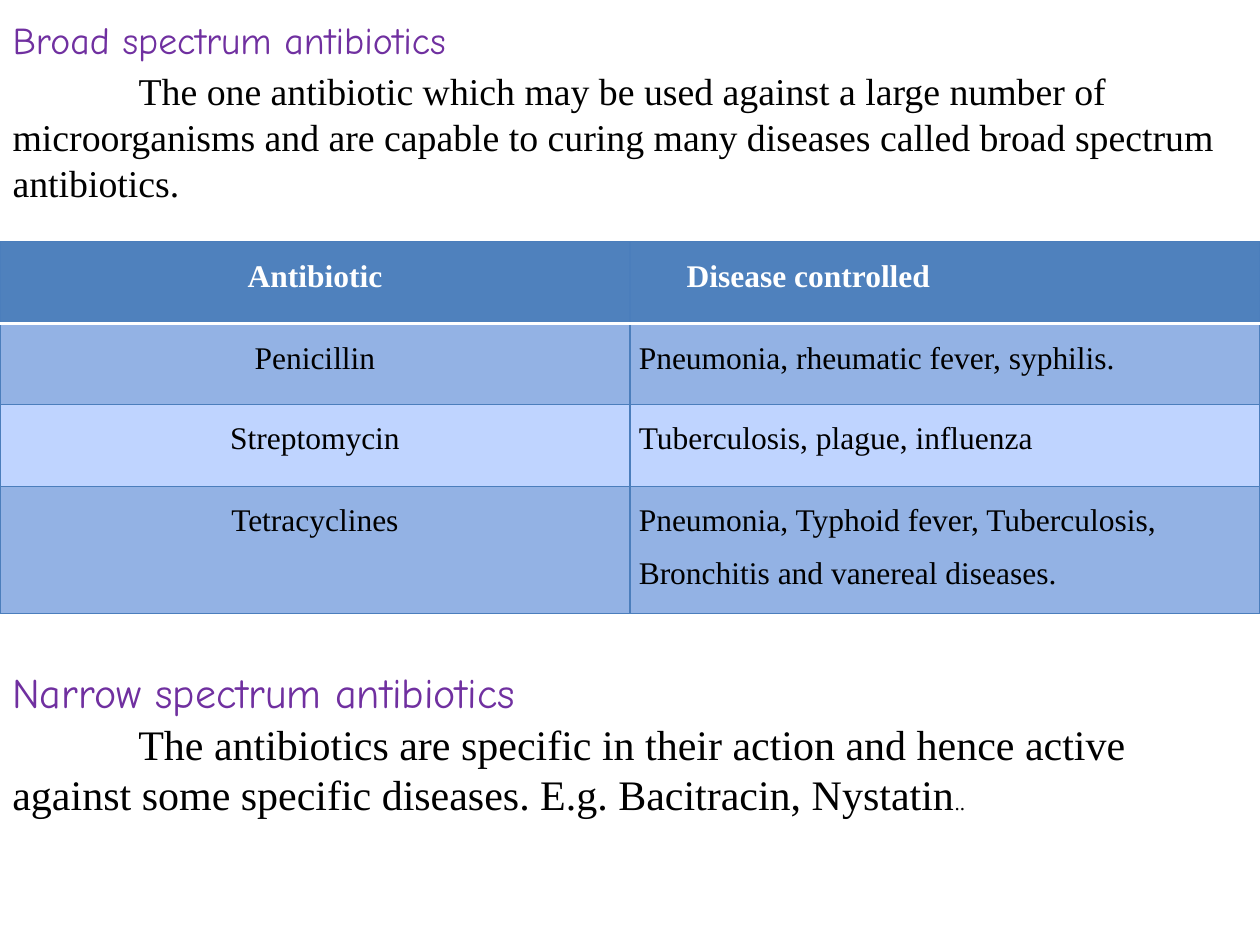
from pptx import Presentation
from pptx.dml.color import RGBColor
from pptx.enum.text import MSO_ANCHOR, MSO_AUTO_SIZE, PP_ALIGN
from pptx.oxml.ns import qn
from pptx.util import Inches, Pt
from lxml.etree import SubElement

PURPLE = RGBColor(0x70, 0x30, 0xA0)
BLACK = RGBColor(0, 0, 0)
WHITE = RGBColor(0xFF, 0xFF, 0xFF)
HEADER_BLUE = RGBColor(0x4F, 0x81, 0xBD)
BAND_DARK = RGBColor(0x93, 0xB2, 0xE4)
BAND_LIGHT = RGBColor(0xBF, 0xD4, 0xFF)
BORDER = RGBColor(0x4B, 0x7E, 0xBC)

HEADING_FONT = "Comic Neue"
BODY_FONT = "Times New Roman"

ROWS = [
    ("Antibiotic", "Disease controlled"),
    ("Penicillin", "Pneumonia, rheumatic fever, syphilis."),
    ("Streptomycin", "Tuberculosis, plague, influenza"),
    ("Tetracyclines",
     "Pneumonia, Typhoid fever, Tuberculosis, Bronchitis and vanereal diseases."),
]
ROW_HEIGHTS = [0.65, 0.64, 0.65, 1.01]


def fill_section(shape, box, heading, body, size, line, gap, anchor, margin_top):
    """Write a purple heading and an indented body paragraph into the shape."""
    shape.left, shape.top, shape.width, shape.height = map(Inches, box)
    tf = shape.text_frame
    tf.word_wrap = True
    tf.auto_size = MSO_AUTO_SIZE.NONE
    tf.vertical_anchor = anchor
    tf.margin_left = tf.margin_right = Inches(0.1)
    tf.margin_top, tf.margin_bottom = Inches(margin_top), Inches(0.05)
    styles = [(heading, HEADING_FONT, PURPLE, 0, 0), (body, BODY_FONT, BLACK, gap, 1)]
    for i, (text, font, color, before, indent) in enumerate(styles):
        p = tf.add_paragraph() if i else tf.paragraphs[0]
        p.add_run().text = text
        p.alignment = PP_ALIGN.LEFT
        p.line_spacing = Pt(line)
        p.space_before = Pt(before)
        pPr = p._p.get_or_add_pPr()
        pPr.set("marL", "0")
        pPr.set("indent", str(Inches(indent)))
        p.font.name, p.font.size, p.font.color.rgb = font, Pt(size), color
    return tf


def set_borders(cell, **sides):
    """Draw cell borders; each side is a (colour, width in points) pair."""
    tcPr = cell._tc.get_or_add_tcPr()
    for i, side in enumerate("LRTB"):
        color, width = sides.get(side, (BORDER, 0.75))
        ln = SubElement(tcPr, qn(f"a:ln{side}"), w=str(Pt(width)))
        fill = SubElement(ln, qn("a:solidFill"))
        SubElement(fill, qn("a:srgbClr"), val=str(color))
        tcPr.insert(i, ln)


def add_disease_table(s, left, top, width):
    frame = s.shapes.add_table(len(ROWS), 2, Inches(left), Inches(top),
                               Inches(width), Inches(sum(ROW_HEIGHTS)))
    table = frame.table
    rule = (WHITE, 2)
    for r, values in enumerate(ROWS):
        table.rows[r].height = Inches(ROW_HEIGHTS[r])
        header = r == 0
        for c, text in enumerate(values):
            cell = table.cell(r, c)
            cell.text = text
            cell.margin_left = Inches(0.45 if header and c else 0.07)
            cell.margin_right = Inches(0.07)
            cell.margin_top = cell.margin_bottom = 0
            cell.fill.solid()
            cell.fill.fore_color.rgb = (
                HEADER_BLUE if header else BAND_DARK if r % 2 else BAND_LIGHT)
            set_borders(cell, **({"B": rule} if header else {"T": rule} if r == 1 else {}))
            p = cell.text_frame.paragraphs[0]
            p.alignment = PP_ALIGN.LEFT if c else PP_ALIGN.CENTER
            p.line_spacing = 1.5
            p.font.name, p.font.size, p.font.bold = BODY_FONT, Pt(18), header
            p.font.color.rgb = WHITE if header else BLACK


def main():
    prs = Presentation()
    prs.slide_width, prs.slide_height = Inches(10), Inches(7.5)
    s = prs.slides.add_slide(prs.slide_layouts[5])

    fill_section(
        s.shapes.title, (0, 0, 10, 3.08), "Broad spectrum antibiotics",
        "The one antibiotic which may be used against a large number of "
        "microorganisms and are capable to curing many diseases called broad "
        "spectrum antibiotics.",
        size=21.6, line=26.3, gap=2.4, anchor=MSO_ANCHOR.TOP, margin_top=0.13)

    add_disease_table(s, 0, 1.92, 10)

    narrow = s.shapes.add_textbox(0, 0, 0, 0)
    tf = fill_section(
        narrow, (0, 4.83, 10, 2.02), "Narrow spectrum antibiotics",
        "The antibiotics are specific in their action and hence active against "
        "some specific diseases. E.g. Bacitracin, Nystatin",
        size=24, line=28.8, gap=0.5, anchor=MSO_ANCHOR.MIDDLE, margin_top=0.16)
    dots = tf.paragraphs[1].add_run()
    dots.text = ".."
    dots.font.size = Pt(12)

    prs.save("out.pptx")


if __name__ == "__main__":
    main()
